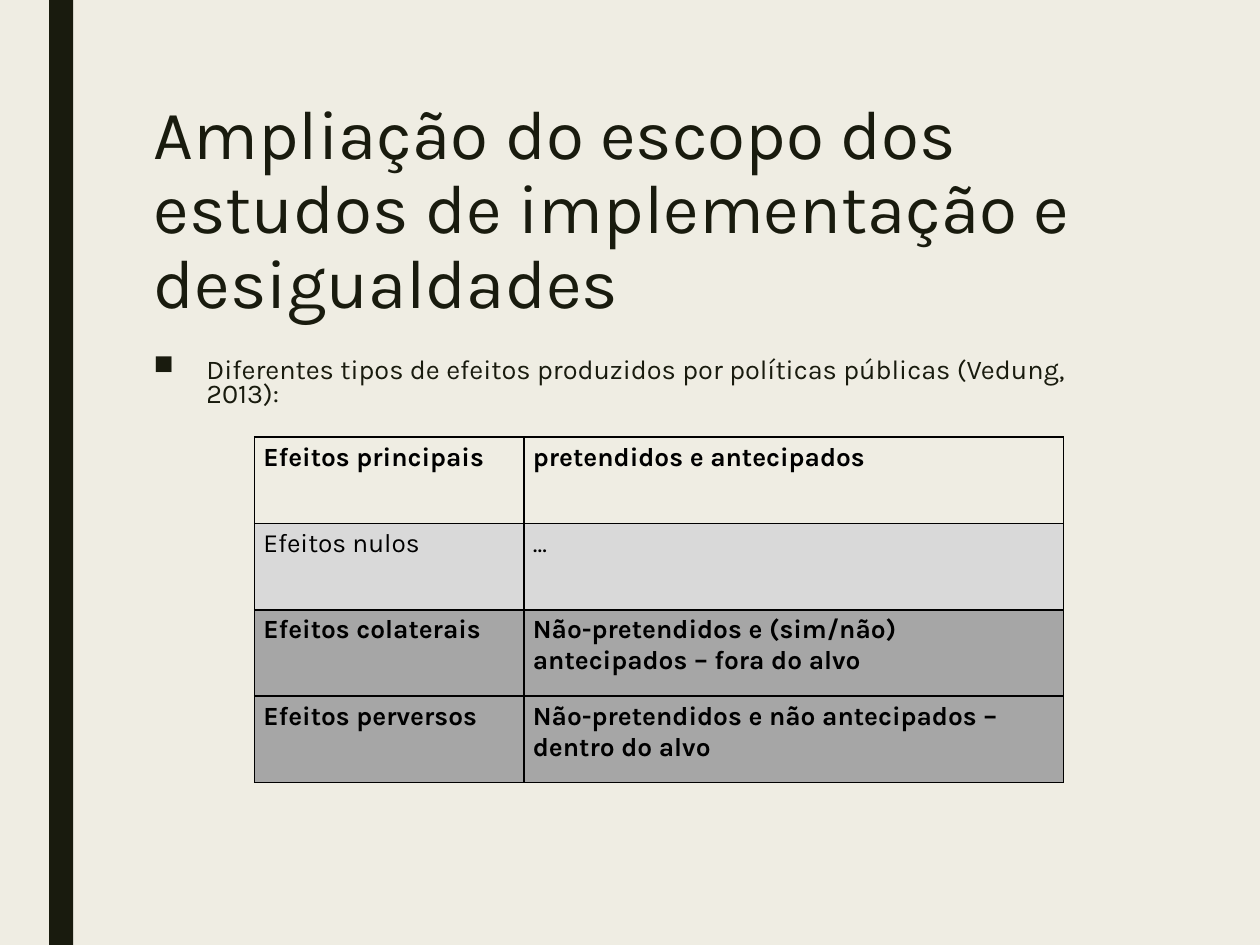
from lxml import etree
from pptx import Presentation
from pptx.dml.color import RGBColor
from pptx.enum.shapes import MSO_SHAPE
from pptx.enum.text import MSO_ANCHOR, PP_ALIGN
from pptx.oxml.ns import qn
from pptx.util import Inches, Pt

RECTANGLE = MSO_SHAPE.RECTANGLE
TOP = MSO_ANCHOR.TOP
LEFT = PP_ALIGN.LEFT
FONT = "Karla"
COLORS = {
    "paper": "EFEDE3",
    "ink": "191B0E",
    "black": "000000",
    "light": "D9D9D9",
    "dark": "A6A6A6",
}


def color(name):
    return RGBColor.from_string(COLORS[name])


def write(frame, text, size, ink="ink", bold=False, line_spacing=None):
    frame.word_wrap = True
    frame.vertical_anchor = TOP
    para = frame.paragraphs[0]
    para.alignment = LEFT
    if line_spacing:
        para.line_spacing = line_spacing
    span = para.add_run()
    span.text = text
    span.font.name = FONT
    span.font.size = Pt(size)
    span.font.bold = bold
    span.font.color.rgb = color(ink)
    return para


deck = Presentation()
deck.slide_width, deck.slide_height = Inches(10), Inches(7.5)
page = deck.slides.add_slide(deck.slide_layouts[5])
page.background.fill.solid()
page.background.fill.fore_color.rgb = color("paper")

# Side bar
bar = page.shapes.add_shape(RECTANGLE, Inches(0.39), 0, Inches(0.19), deck.slide_height)
bar.shadow.inherit = False
bar.fill.solid()
bar.fill.fore_color.rgb = color("ink")
bar.line.fill.background()

# Title
title = page.shapes.title
title.left, title.top = Inches(1.12), Inches(0.75)
title.width, title.height = Inches(7.88), Inches(1.62)
write(title.text_frame,
      "Ampliação do escopo dos estudos de implementação e desigualdades",
      39.6, line_spacing=0.89)

# Bulleted introduction
intro = page.shapes.add_textbox(Inches(1.12), Inches(2.81), Inches(7.88), Inches(0.41))
para = write(intro.text_frame,
             "Diferentes tipos de efeitos produzidos por políticas públicas (Vedung, 2013):",
             15.5, line_spacing=0.74)
para.space_before, para.space_after = Pt(10), Pt(2)
properties = para._p.get_or_add_pPr()
properties.set("marL", str(Inches(0.42)))
properties.set("indent", str(-Inches(0.42)))
etree.SubElement(properties, qn("a:buChar"), char="■")

# Table of effects: label, description, fill, bold
EFFECTS = [
    ("Efeitos principais", "pretendidos e antecipados", None, True),
    ("Efeitos nulos", "...", "light", False),
    ("Efeitos colaterais", "Não-pretendidos e (sim/não) antecipados – fora do alvo", "dark", True),
    ("Efeitos perversos", "Não-pretendidos e não antecipados – dentro do alvo", "dark", True),
]
table = page.shapes.add_table(len(EFFECTS), 2, Inches(2.02), Inches(3.47),
                              Inches(6.42), Inches(2.74)).table
table.first_row = table.horz_banding = False
table.columns[0].width, table.columns[1].width = Inches(2.14), Inches(4.28)

for row, (label, description, fill, bold) in enumerate(EFFECTS):
    table.rows[row].height = Inches(2.74 / len(EFFECTS))
    for column, text in enumerate((label, description)):
        cell = table.cell(row, column)
        cell.margin_left = cell.margin_right = Inches(0.07)
        cell.margin_top = cell.margin_bottom = Inches(0.04)
        write(cell.text_frame, text, 15, ink="black", bold=bold)
        # Borders come before the fill in the cell properties
        for side in ("lnL", "lnR", "lnT", "lnB"):
            border = etree.SubElement(cell._tc.get_or_add_tcPr(), qn(f"a:{side}"), w=str(Pt(1)))
            paint = etree.SubElement(border, qn("a:solidFill"))
            etree.SubElement(paint, qn("a:srgbClr"), val=COLORS["black"])
        if fill:
            cell.fill.solid()
            cell.fill.fore_color.rgb = color(fill)
        else:
            cell.fill.background()

deck.save("out.pptx")
